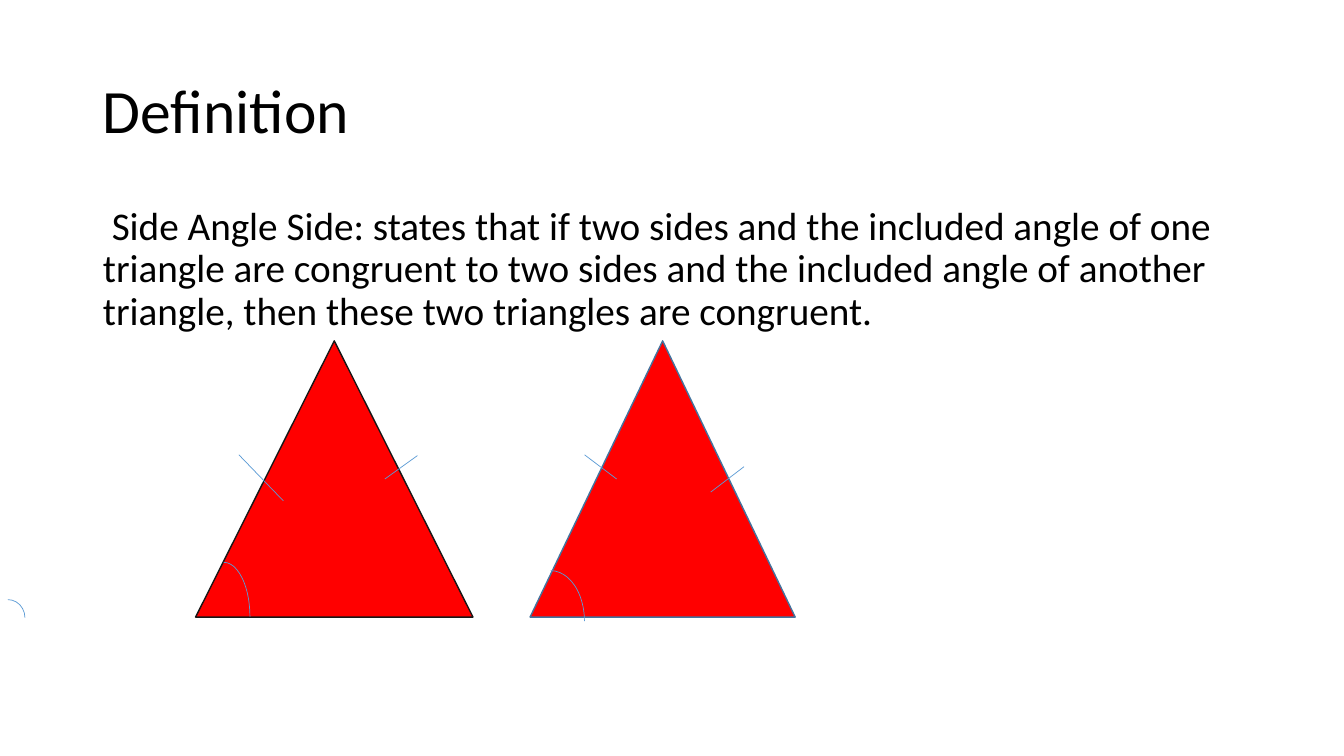
from dataclasses import dataclass

from lxml import etree
from pptx import Presentation
from pptx import util as u
from pptx.dml import color
from pptx.enum import shapes, text
from pptx.oxml import ns


@dataclass(frozen=True)
class Theme:
    font: str = "Calibri"
    title_size: float = 44
    body_size: float = 28
    ink: str = "000000"
    triangle: str = "FF0000"
    mark: str = "5B9BD5"
    mark_width: float = 0.5
    edge_width: float = 1


@dataclass(frozen=True)
class Frame:
    left: float
    top: float
    width: float
    height: float

    def lengths(self) -> list:
        return [u.Cm(side) for side in (self.left, self.top, self.width, self.height)]


@dataclass(frozen=True)
class Triangle:
    frame: Frame
    edge: str


@dataclass(frozen=True)
class Tick:
    start: tuple[float, float]
    end: tuple[float, float]


THEME = Theme()
TITLE = "Definition"
DEFINITION = (
    " Side Angle Side: states that if two sides and the included angle of one "
    "triangle are congruent to two sides and the included angle of another "
    "triangle, then these two triangles are congruent."
)
TITLE_FRAME = Frame(2.34, 1.02, 29.21, 3.68)
BODY_FRAME = Frame(2.34, 5.08, 29.21, 12.09)
TRIANGLES = [
    Triangle(Frame(4.93, 8.59, 6.99, 6.96), "181717"),
    Triangle(Frame(13.36, 8.59, 6.68, 6.96), "43739E"),
]
ANGLE_ARCS = [
    Frame(-0.23, 15.11, 0.86, 0.91),
    Frame(4.98, 14.17, 1.32, 2.74),
    Frame(13.03, 14.38, 1.7, 2.54),
]
SIDE_TICKS = [
    Tick((14.73, 11.46), (15.54, 12.07)),
    Tick((18.75, 11.76), (17.91, 12.4)),
    Tick((10.52, 11.48), (9.7, 12.07)),
    Tick((6.02, 11.46), (7.14, 12.62)),
]


def rgb(value: str) -> color.RGBColor:
    return color.RGBColor.from_string(value)


def fill_placeholder(box, frame: Frame, words: str, size: float, anchor) -> None:
    box.left, box.top, box.width, box.height = frame.lengths()
    box.text_frame.text = words
    box.text_frame.word_wrap = True
    box.text_frame.auto_size = text.MSO_AUTO_SIZE.NONE
    box.text_frame.vertical_anchor = anchor
    para = box.text_frame.paragraphs[0]
    para.alignment = text.PP_ALIGN.LEFT
    para.line_spacing = 0.9
    para.space_before = u.Pt(0)
    properties = para._p.get_or_add_pPr()
    properties.set("marL", "0")
    properties.set("indent", "0")
    etree.SubElement(properties, ns.qn("a:buNone"))
    span = para.runs[0]
    span.font.name = THEME.font
    span.font.size = u.Pt(size)
    span.font.color.rgb = rgb(THEME.ink)


def style_line(line, value: str, width: float) -> None:
    line.color.rgb = rgb(value)
    line.width = u.Pt(width)


def draw_triangle(page, triangle: Triangle) -> None:
    shape = page.shapes.add_shape(
        shapes.MSO_SHAPE.ISOSCELES_TRIANGLE, *triangle.frame.lengths()
    )
    shape.shadow.inherit = False
    shape.fill.solid()
    shape.fill.fore_color.rgb = rgb(THEME.triangle)
    style_line(shape.line, triangle.edge, THEME.edge_width)


def draw_arc(page, frame: Frame) -> None:
    arc = page.shapes.add_shape(shapes.MSO_SHAPE.ARC, *frame.lengths())
    arc.shadow.inherit = False
    arc.fill.background()
    style_line(arc.line, THEME.mark, THEME.mark_width)


def draw_tick(page, tick: Tick) -> None:
    ends = [u.Cm(value) for value in (*tick.start, *tick.end)]
    connector = page.shapes.add_connector(shapes.MSO_CONNECTOR.STRAIGHT, *ends)
    style_line(connector.line, THEME.mark, THEME.mark_width)
    etree.SubElement(connector._element.spPr, ns.qn("a:effectLst"))


def main() -> None:
    deck = Presentation()
    deck.slide_width, deck.slide_height = u.Cm(33.87), u.Cm(19.05)
    page = deck.slides.add_slide(deck.slide_layouts[1])
    fill_placeholder(page.shapes.title, TITLE_FRAME, TITLE,
                     THEME.title_size, text.MSO_ANCHOR.MIDDLE)
    fill_placeholder(page.placeholders[1], BODY_FRAME, DEFINITION,
                     THEME.body_size, text.MSO_ANCHOR.TOP)
    for triangle in TRIANGLES:
        draw_triangle(page, triangle)
    for frame in ANGLE_ARCS:
        draw_arc(page, frame)
    for tick in SIDE_TICKS:
        draw_tick(page, tick)
    deck.save("out.pptx")


if __name__ == "__main__":
    main()
